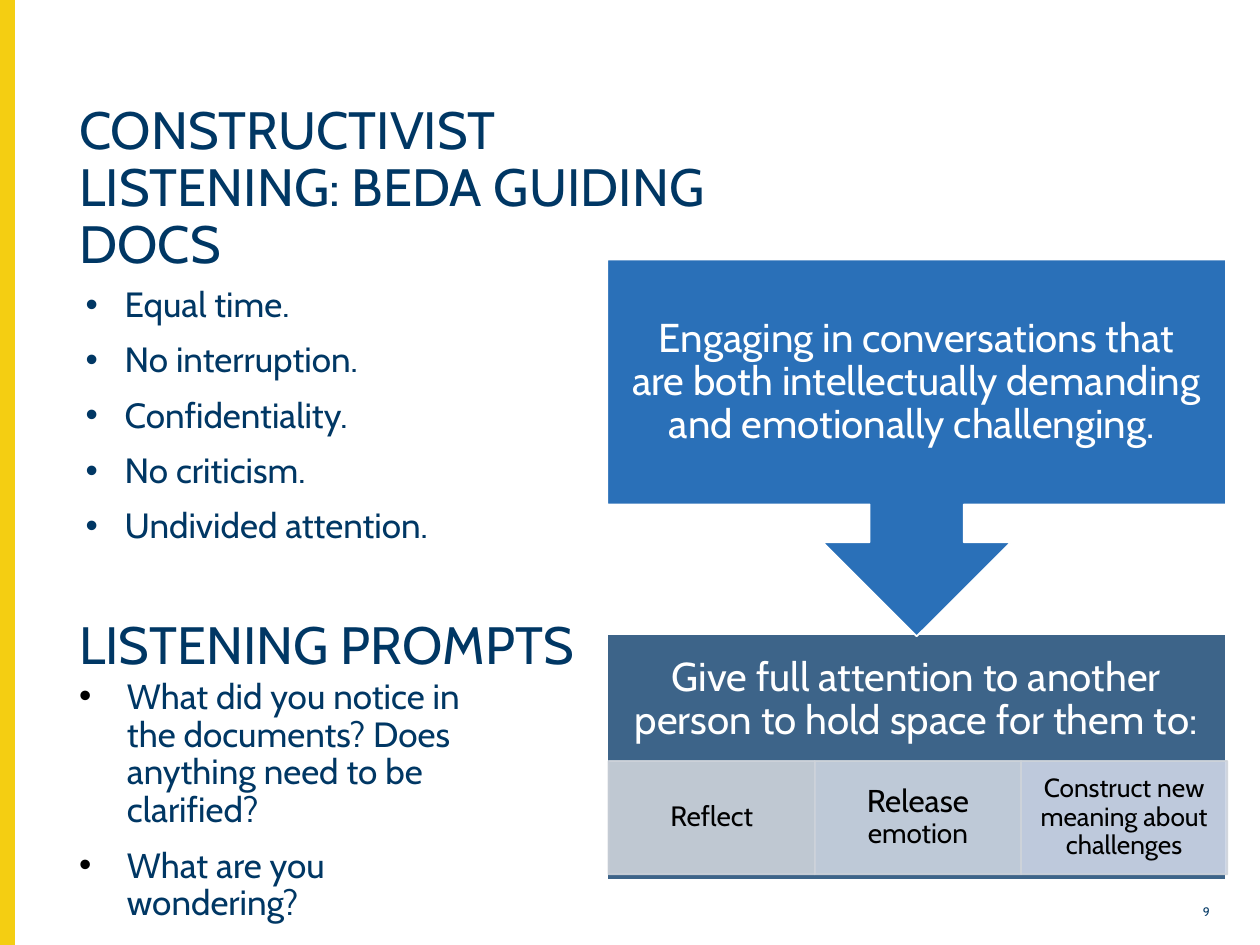
from lxml.etree import SubElement
from pptx import Presentation
from pptx.dml.color import RGBColor
from pptx.enum.shapes import MSO_SHAPE as Shape
from pptx.enum.text import MSO_ANCHOR as Anchor, MSO_AUTO_SIZE as AutoSize, PP_ALIGN as Align
from pptx.oxml.ns import qn
from pptx.util import Inches, Pt

NAVY = RGBColor(0x00, 0x37, 0x64)
YELLOW = RGBColor(0xF4, 0xCE, 0x12)
BLUE = RGBColor(0x2A, 0x70, 0xB8)
STEEL = RGBColor(0x3D, 0x64, 0x89)
GREY = RGBColor(0xCE, 0xD3, 0xDA)
GREY_BLUE = RGBColor(0xCD, 0xD4, 0xE0)
PALE_BLUE = RGBColor(0xCD, 0xD5, 0xE6)
WHITE = RGBColor(0xFF, 0xFF, 0xFF)
BLACK = RGBColor(0x00, 0x00, 0x00)


class SlideBuilder:
    """Holds the style and the current page."""

    font_name = "Cabin"
    line_spacing = 0.9

    def __init__(self, page):
        self.page = page

    def fill_text(self, box, paragraphs, color, align=Align.LEFT, anchor=Anchor.TOP,
                  insets=(0.1, 0.05), indent=None, bullet_color=None):
        """Fill a box; each paragraph is a list of (text, size) spans."""
        frame = box.text_frame
        side, top = map(Inches, insets)
        settings = {"word_wrap": True, "auto_size": AutoSize.NONE, "vertical_anchor": anchor,
                    "margin_left": side, "margin_right": side,
                    "margin_top": top, "margin_bottom": top}
        for name, value in settings.items():
            setattr(frame, name, value)
        for index, spans in enumerate(paragraphs):
            para = frame.add_paragraph() if index else frame.paragraphs[0]
            layout = {"alignment": align, "line_spacing": self.line_spacing,
                      "space_before": Pt(10 if index else 0)}
            for name, value in layout.items():
                setattr(para, name, value)
            if indent:
                self.add_bullet(para, indent, bullet_color)
            for text, size in spans:
                span = para.add_run()
                span.text = text
                span.font.color.rgb = color
                for name, value in {"name": self.font_name, "size": Pt(size)}.items():
                    setattr(span.font, name, value)

    def add_bullet(self, para, indent, color):
        properties = para._p.get_or_add_pPr()
        properties.set("marL", str(Inches(indent)))
        properties.set("indent", str(-Inches(indent)))
        if color is not None:
            bullet_fill = SubElement(properties, qn("a:buClr"))
            SubElement(bullet_fill, qn("a:srgbClr"), val=str(color))
        SubElement(properties, qn("a:buFont"), typeface="Arial")
        SubElement(properties, qn("a:buChar"), char="•")

    def placeholder(self, box, place, paragraphs, **style):
        box.left, box.top, box.width, box.height = map(Inches, place)
        self.fill_text(box, paragraphs, NAVY, **style)

    def text(self, place, paragraphs, color=NAVY, **style):
        box = self.page.shapes.add_textbox(*map(Inches, place))
        self.fill_text(box, paragraphs, color, **style)

    def shape(self, kind, place, fill, line, opacity=None):
        shape = self.page.shapes.add_shape(kind, *map(Inches, place))
        shape.shadow.inherit = False
        shape.fill.solid()
        shape.fill.fore_color.rgb = fill
        shape.line.color.rgb = line
        shape.line.width = Pt(1)
        if opacity:
            for color in shape._element.spPr.iter(qn("a:srgbClr")):
                SubElement(color, qn("a:alpha"), val=str(opacity * 1000))
        return shape


def main():
    deck = Presentation()
    deck.slide_width, deck.slide_height = Inches(10), Inches(7.5)
    page = deck.slides.add_slide(deck.slide_layouts[1])
    builder = SlideBuilder(page)

    # Yellow edge
    builder.shape(Shape.RECTANGLE, (0, 0, 0.11, 7.5), YELLOW, YELLOW)

    # Title and listening rules
    builder.placeholder(page.shapes.title, (0.53, 0.69, 5.51, 1.54),
                        [[("CONSTRUCTIVIST LISTENING: BEDA GUIDING DOCS", 30)]],
                        anchor=Anchor.BOTTOM)
    rules = ["Equal time.", "No interruption.", "Confidentiality.", "No criticism.",
             "Undivided attention."]
    builder.placeholder(page.placeholders[1], (0.58, 2.23, 3.46, 2.6),
                        [[(rule, 20)] for rule in rules], indent=0.31)

    # Listening prompts
    builder.text((0.53, 4.35, 4.75, 1.06), [[("LISTENING PROMPTS", 30)]], anchor=Anchor.BOTTOM)
    prompts = ["What did you notice in the documents? Does anything need to be clarified?",
               "What are you wondering?"]
    builder.text((0.53, 5.34, 3.46, 3.82), [[(prompt, 20)] for prompt in prompts],
                 indent=0.38, bullet_color=BLACK)

    # Lower panel with three outcomes
    left, width = 4.82, 4.91
    centered = {"align": Align.CENTER, "anchor": Anchor.MIDDLE}
    heading = {**centered, "color": WHITE, "insets": (0.18, 0.18)}
    builder.shape(Shape.RECTANGLE, (left, 5.03, width, 1.95), STEEL, WHITE)
    builder.text((left, 5.03, width, 1.05),
                 [[("Give full attention to another person to hold space for them to:", 23)]],
                 **heading)
    outcomes = [
        (GREY, [("Reflect", 16)]),
        (GREY_BLUE, [("Release", 18), (" emotion", 16)]),
        (PALE_BLUE, [("Construct new meaning about challenges", 15)]),
    ]
    cell_width = width / len(outcomes)
    for column, (fill, spans) in enumerate(outcomes):
        place = (left + 0.01 + column * cell_width, 6.04, cell_width, 0.9)
        cell = builder.shape(Shape.RECTANGLE, place, fill, GREY, opacity=90)
        builder.fill_text(cell, [spans], BLACK, insets=(0.12, 0.02), **centered)

    # Callout pointing down to the panel
    callout = builder.shape(Shape.UP_ARROW_CALLOUT, (left, 2.06, width, 2.99), BLUE, WHITE)
    callout.rotation = 180
    builder.text((left, 2.06, width, 1.95),
                 [[("Engaging in conversations that are both intellectually demanding "
                    "and emotionally challenging. ", 23)]], **heading)

    # Page number
    builder.text((9.2, 7.14, 0.5, 0.21), [[("9", 7)]], align=Align.RIGHT)

    deck.save("out.pptx")


if __name__ == "__main__":
    main()
